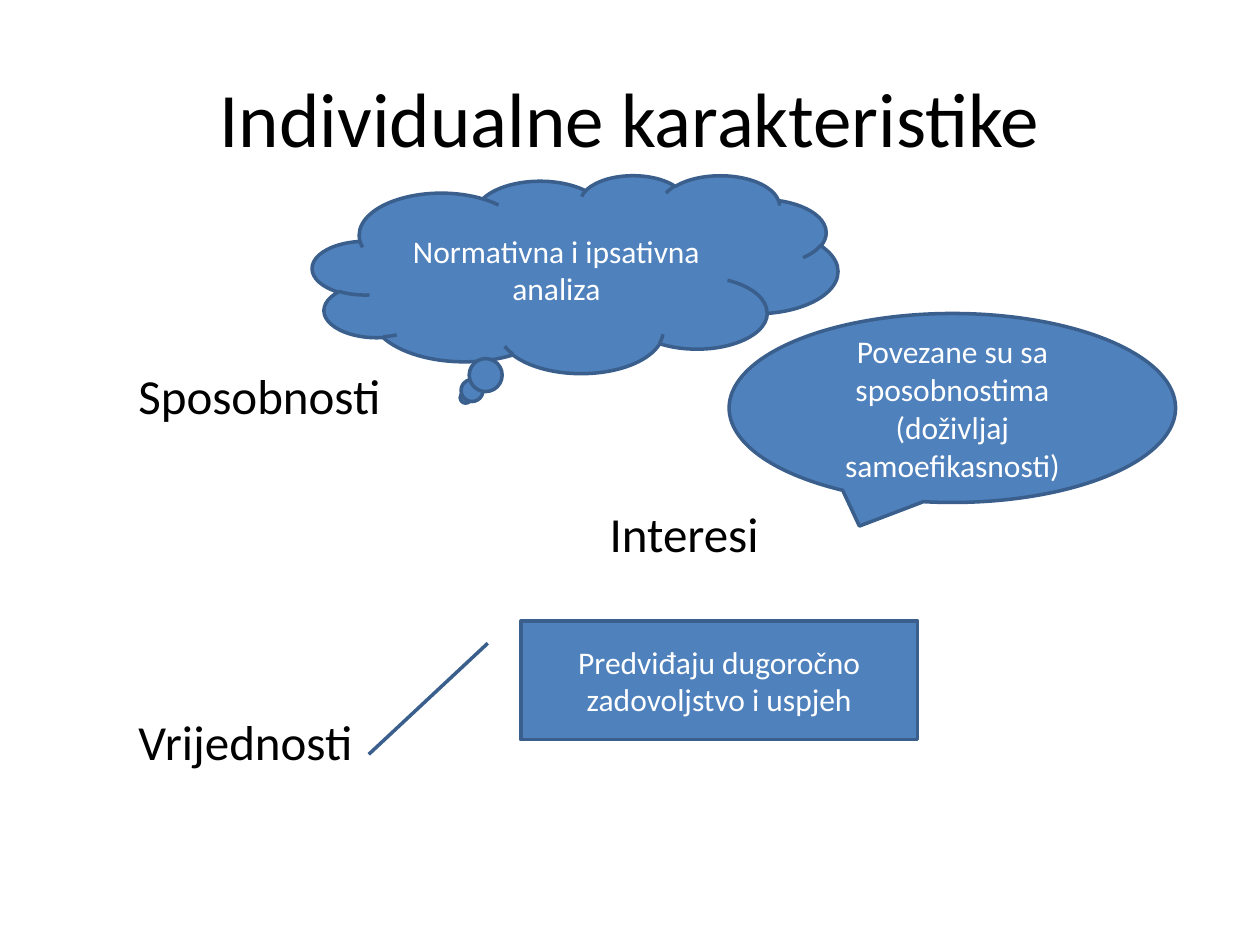
from pptx import Presentation
from pptx.dml.color import RGBColor
from pptx.enum.shapes import MSO_SHAPE
from pptx.enum.text import MSO_ANCHOR, PP_ALIGN
from pptx.util import Cm, Pt

CENTER, LEFT = PP_ALIGN.CENTER, PP_ALIGN.LEFT
MIDDLE, TOP = MSO_ANCHOR.MIDDLE, MSO_ANCHOR.TOP
CLOUD = MSO_SHAPE.CLOUD_CALLOUT
OVAL = MSO_SHAPE.OVAL_CALLOUT
BORDER = MSO_SHAPE.LINE_CALLOUT_1

TITLE = "Individualne karakteristike"
# text, indent in cm, space before in points
TRAITS = [
    ("Sposobnosti", 0, 0),
    ("Interesi", 9.5, 45),
    ("Vrijednosti", 0, 85),
]
# kind, left, top, width, height in cm, text
NOTES = [
    (CLOUD, 6.3, 3.53, 10.59, 3.99, "Normativna i ipsativna analiza"),
    (OVAL, 14.7, 6.32, 9, 3.81,
     "Povezane su sa sposobnostima (doživljaj samoefikasnosti)"),
    (BORDER, 10.5, 12.52, 8, 2.39,
     "Predviđaju dugoročno zadovoljstvo i uspjeh"),
]


def color(code):
    return RGBColor.from_string(code)


def style(para, size, code, align):
    para.alignment = align
    para.font.name = "Calibri"
    para.font.size = Pt(size)
    para.font.color.rgb = color(code)


def write(shape, text, size, code):
    """Put one centred paragraph in the middle of a shape."""
    frame = shape.text_frame
    frame.word_wrap = True
    frame.vertical_anchor = MIDDLE
    frame.text = text
    style(frame.paragraphs[0], size, code, CENTER)


def add_traits(slide):
    box = slide.shapes.add_textbox(Cm(2.54), Cm(7.25), Cm(20.3), Cm(9))
    frame = box.text_frame
    frame.word_wrap = True
    frame.vertical_anchor = TOP
    for i, (text, indent, gap) in enumerate(TRAITS):
        para = frame.add_paragraph() if i else frame.paragraphs[0]
        para.text = text
        para.space_before = Pt(gap)
        style(para, 28, "000000", LEFT)
        para._p.get_or_add_pPr().set("marL", str(Cm(indent)))


def add_note(slide, kind, left, top, width, height, text):
    note = slide.shapes.add_shape(
        kind, Cm(left), Cm(top), Cm(width), Cm(height))
    note.shadow.inherit = False
    note.fill.solid()
    note.fill.fore_color.rgb = color("4F81BD")
    note.line.color.rgb = color("3A5F8C")
    note.line.width = Pt(2)
    write(note, text, 18, "FFFFFF")


def main():
    deck = Presentation()
    deck.slide_width, deck.slide_height = Cm(25.4), Cm(19.05)
    slide = deck.slides.add_slide(deck.slide_layouts[5])
    title = slide.shapes.title
    title.left, title.top = Cm(1.27), Cm(0.76)
    title.width, title.height = Cm(22.86), Cm(3.18)
    write(title, TITLE, 44, "000000")
    add_traits(slide)
    for note in NOTES:
        add_note(slide, *note)
    deck.save("out.pptx")


if __name__ == "__main__":
    main()
